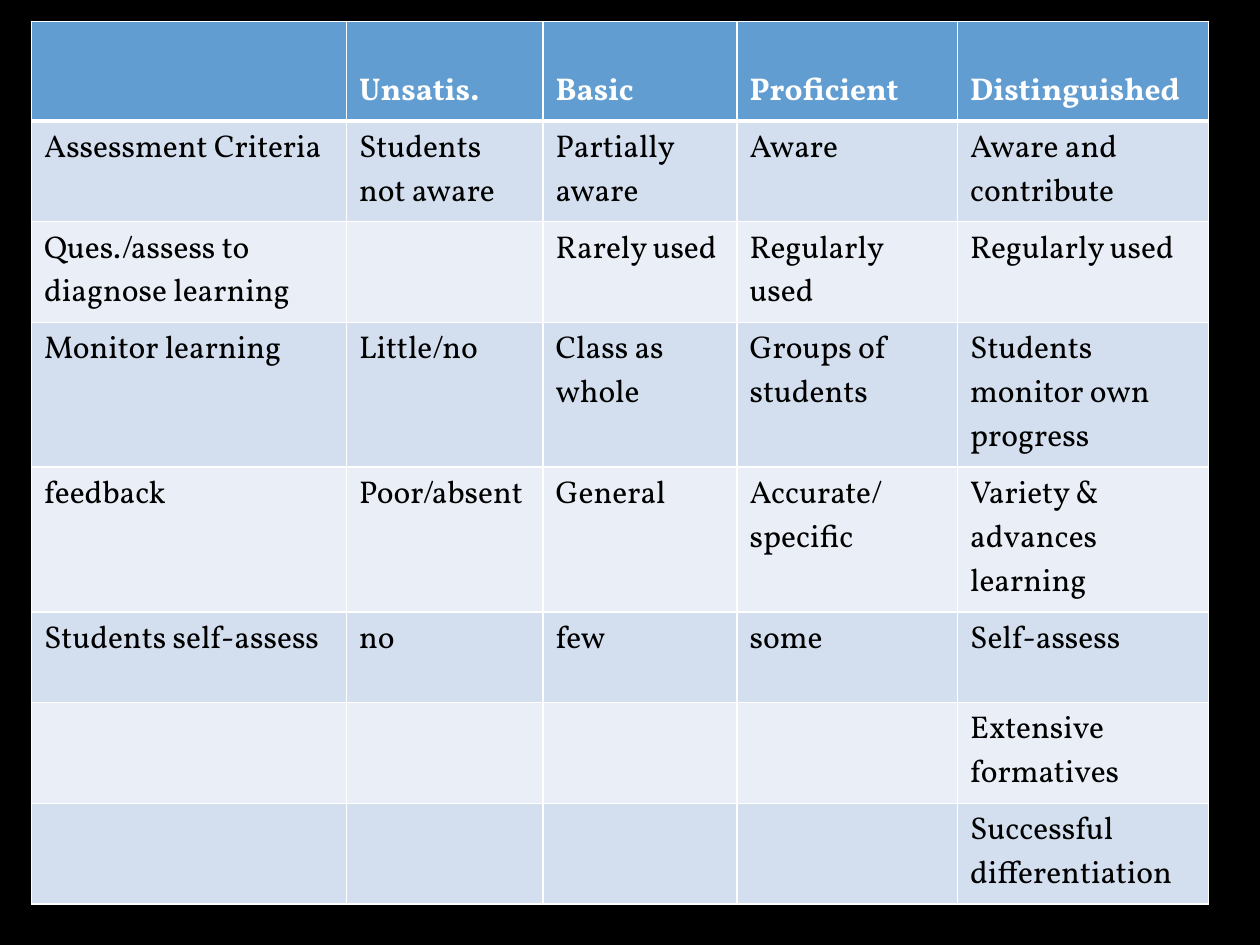
from lxml import etree
from pptx import Presentation
from pptx.dml.color import RGBColor
from pptx.enum.text import MSO_ANCHOR
from pptx.oxml.ns import qn
from pptx.util import Inches, Pt

BOTTOM, TOP = MSO_ANCHOR.BOTTOM, MSO_ANCHOR.TOP
COLORS = {
    "background": "000000",
    "header": "629DD1",
    "odd": "D3DFEE",
    "even": "EAEFF7",
    "border": "FFFFFF",
    "header_text": "FFFFFF",
    "body_text": "000000",
}
FONT = "Vollkorn"
COLUMN_SHARES = [0.25, 0.156, 0.154, 0.175, 0.199]
ROW_HEIGHTS = [0.79, 0.8, 0.8, 1.14, 1.15, 0.72, 0.8, 0.8]
RUBRIC = [
    ["", "Unsatis.", "Basic", "Proficient", "Distinguished"],
    ["Assessment Criteria", "Students not aware", "Partially aware", "Aware", "Aware and contribute"],
    ["Ques./assess to diagnose learning", "", "Rarely used", "Regularly used", "Regularly used"],
    ["Monitor learning", "Little/no", "Class as whole", "Groups of students", "Students monitor own progress"],
    ["feedback", "Poor/absent", "General", "Accurate/specific", "Variety & advances learning"],
    ["Students self-assess", "no", "few", "some", "Self-assess"],
    ["", "", "", "", "Extensive formatives"],
    ["", "", "", "", "Successful differentiation"],
]


def color(name):
    return RGBColor.from_string(COLORS[name])


def add_borders(cell, widths):
    properties = cell._tc.get_or_add_tcPr()
    for position, (side, width) in enumerate(widths.items()):
        line = etree.Element(qn(f"a:ln{side}"), w=str(Pt(width)))
        fill = etree.SubElement(line, qn("a:solidFill"))
        etree.SubElement(fill, qn("a:srgbClr"), val=COLORS["border"])
        properties.insert(position, line)


deck = Presentation()
deck.slide_width, deck.slide_height = Inches(10), Inches(7.5)
slide = deck.slides.add_slide(deck.slide_layouts[6])
slide.background.fill.solid()
slide.background.fill.fore_color.rgb = color("background")

rubric = slide.shapes.add_table(
    len(RUBRIC), len(COLUMN_SHARES),
    Inches(0.25), Inches(0.17),
    int(deck.slide_width * sum(COLUMN_SHARES)), Inches(sum(ROW_HEIGHTS)),
).table
rubric.first_row = False
rubric.horz_banding = False
for column, share in zip(rubric.columns, COLUMN_SHARES):
    column.width = int(deck.slide_width * share)
for row, height in zip(rubric.rows, ROW_HEIGHTS):
    row.height = Inches(height)

for row_index, ratings in enumerate(RUBRIC):
    is_header = row_index == 0
    band = "header" if is_header else ("odd" if row_index % 2 else "even")
    for column_index, rating in enumerate(ratings):
        cell = rubric.cell(row_index, column_index)
        cell.fill.solid()
        cell.fill.fore_color.rgb = color(band)
        cell.vertical_anchor = BOTTOM if is_header else TOP
        add_borders(cell, {
            "L": 1,
            "R": 1,
            "T": 3 if row_index == 1 else 1,
            "B": 3 if is_header else 1,
        })
        if rating:
            run = cell.text_frame.paragraphs[0].add_run()
            run.text = rating
            run.font.name = FONT
            run.font.size = Pt(18)
            run.font.bold = is_header
            run.font.color.rgb = color("header_text" if is_header else "body_text")

deck.save("out.pptx")
